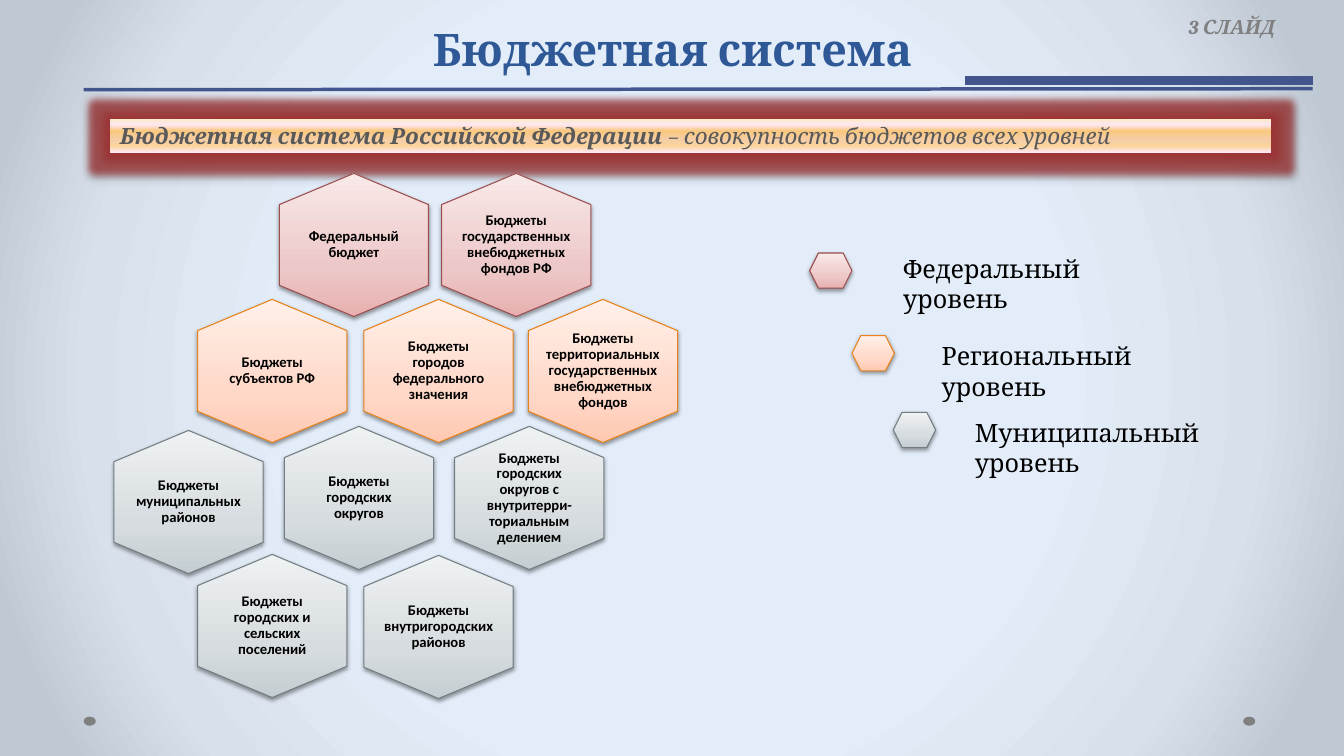
from lxml import etree
from pptx import Presentation
from pptx.dml.color import RGBColor
from pptx.enum.shapes import MSO_CONNECTOR, MSO_SHAPE
from pptx.enum.text import MSO_ANCHOR, PP_ALIGN
from pptx.oxml.ns import qn
from pptx.util import Inches, Pt

RECT, OVAL, HEXAGON = MSO_SHAPE.RECTANGLE, MSO_SHAPE.OVAL, MSO_SHAPE.HEXAGON
STRAIGHT = MSO_CONNECTOR.STRAIGHT
MIDDLE, BOTTOM = MSO_ANCHOR.MIDDLE, MSO_ANCHOR.BOTTOM
CENTER, LEFT = PP_ALIGN.CENTER, PP_ALIGN.LEFT

COLORS = {
    "title": "2F5897", "rule": "42568D", "gray": "808080",
    "banner_text": "595959", "black": "000000", "glow": "9C3030",
}
BACKGROUND = [(50, "E3EDF9"), (76, "D8E0EB"), (92, "BFC9D4")]
BANNER = [(0, "FBEAC7"), (18, "FEE7F2"), (36, "FAC77D"),
          (63, "F5CEA7"), (82, "FBD49C"), (100, "FEE7F2")]
# Budget level: gradient stops and outline colour
LEVELS = {
    "federal": ([(0, "E8B0B0"), (35, "EDC8C8"), (100, "F9E9E9")], "9A4E4E"),
    "regional": ([(0, "FFC9B1"), (35, "FFD8C8"), (100, "FFF0EA")], "E6811C"),
    "municipal": ([(0, "C5CED2"), (35, "D6DCDF"), (100, "EFF2F3")], "727D82"),
}
# Level, left, top, horizontal inset, text
BUDGETS = [
    ("federal", 2.77, 1.72, 0.22, "Федеральный бюджет"),
    ("federal", 4.38, 1.72, 0.17, "Бюджеты государственных внебюджетных фондов РФ"),
    ("regional", 1.96, 2.97, 0.22, "Бюджеты субъектов РФ"),
    ("regional", 3.61, 2.97, 0.22, "Бюджеты городов федерального значения"),
    ("regional", 5.24, 2.97, 0.17,
     "Бюджеты территориальных государственных внебюджетных фондов"),
    ("municipal", 1.13, 4.27, 0.17, "Бюджеты муниципальных районов"),
    ("municipal", 2.82, 4.23, 0.22, "Бюджеты городских округов"),
    ("municipal", 4.51, 4.23, 0.17,
     "Бюджеты городских округов с внутритерри-ториальным делением"),
    ("municipal", 1.96, 5.5, 0.22, "Бюджеты городских и сельских поселений"),
    ("municipal", 3.61, 5.51, 0.17, "Бюджеты внутригородских районов"),
]
# Level, marker left and top, text left, top and width, text
LEGEND = [
    ("federal", 8.03, 2.51, 8.86, 2.46, 2.8, "Федеральный уровень"),
    ("regional", 8.45, 3.33, 9.24, 3.33, 2.91, "Региональный уровень"),
    ("municipal", 8.86, 4.09, 9.57, 4.09, 3.24, "Муниципальный уровень"),
]
HEX_W, HEX_H, HEX_SLOPE = 1.48, 1.42, 0.31


def color(name):
    return RGBColor.from_string(COLORS[name])


def set_gradient(fill, element, stops, angle=None):
    """Linear gradient at an angle, or a circle from the centre without one."""
    fill.gradient()
    grad = element.find(".//" + qn("a:gradFill"))
    for child in list(grad):
        grad.remove(child)
    gs_list = etree.SubElement(grad, qn("a:gsLst"))
    for pos, rgb in stops:
        gs = etree.SubElement(gs_list, qn("a:gs"), pos=str(pos * 1000))
        etree.SubElement(gs, qn("a:srgbClr"), val=rgb)
    if angle is None:
        circle = etree.SubElement(grad, qn("a:path"), path="circle")
        etree.SubElement(circle, qn("a:fillToRect"),
                         dict.fromkeys("ltrb", "50000"))
    else:
        etree.SubElement(grad, qn("a:lin"), ang=str(angle * 60000), scaled="0")


def add_effect(sp, tag, rgb, alpha, **attrs):
    effects = sp.element.spPr.find(qn("a:effectLst"))
    effect = etree.SubElement(effects, qn(tag),
                              {k: str(v) for k, v in attrs.items()})
    clr = etree.SubElement(effect, qn("a:srgbClr"), val=rgb)
    etree.SubElement(clr, qn("a:alpha"), val=str(alpha * 1000))


def add_shadow(sp, alpha, blur, dist):
    add_effect(sp, "a:outerShdw", COLORS["black"], alpha, blurRad=int(Pt(blur)),
               dist=int(Pt(dist)), dir=90 * 60000, rotWithShape=0)


def format_run(r, size, font, color_name, bold=False, italic=False):
    r.font.size, r.font.name = Pt(size), font
    r.font.bold, r.font.italic = bold, italic
    r.font.color.rgb = color(color_name)


def style_level(sp, level):
    stops, outline = LEVELS[level]
    set_gradient(sp.fill, sp.element, stops, 270)
    sp.line.color.rgb = RGBColor.from_string(outline)
    sp.line.width = Pt(0.75)
    sp.shadow.inherit = False
    add_shadow(sp, 38, 3.1, 1.6)


def add_title(slide, text):
    sp = slide.shapes.title
    sp.left, sp.top = Inches(0.67), Inches(0)
    sp.width, sp.height = Inches(12), Inches(0.8)
    tf = sp.text_frame
    tf.text = text
    tf.vertical_anchor = BOTTOM
    p = tf.paragraphs[0]
    p.alignment, p.line_spacing = CENTER, Pt(58)
    format_run(p.runs[0], 32, "Cambria", "title", bold=True)


def add_label(slide, x, y, w, h, text, size, color_name, wrap=True, strong=False):
    tf = slide.shapes.add_textbox(Inches(x), Inches(y), Inches(w), Inches(h)).text_frame
    tf.word_wrap = wrap
    tf.text = text
    format_run(tf.paragraphs[0].runs[0], size, "Cambria", color_name, strong, strong)


def add_rule(slide, x1, y1, x2, y2, width):
    line = slide.shapes.add_connector(STRAIGHT, Inches(x1), Inches(y1),
                                      Inches(x2), Inches(y2))
    line.line.color.rgb = color("rule")
    line.line.width = Pt(width)
    etree.SubElement(line.element.spPr, qn("a:effectLst"))


def add_dot(slide, x, y):
    sp = slide.shapes.add_shape(OVAL, Inches(x), Inches(y), Inches(0.12), Inches(0.09))
    sp.fill.solid()
    sp.fill.fore_color.rgb = color("gray")
    sp.line.fill.background()
    sp.shadow.inherit = False


def add_banner(slide, term, definition):
    sp = slide.shapes.add_shape(RECT, Inches(1.09), Inches(1.18),
                                Inches(11.52), Inches(0.33))
    set_gradient(sp.fill, sp.element, BANNER, 90)
    sp.line.fill.background()
    sp.shadow.inherit = False
    add_effect(sp, "a:glow", COLORS["glow"], 75, rad=int(Pt(10)))
    add_shadow(sp, 32, 3.5, 2.2)
    tf = sp.text_frame
    tf.vertical_anchor = MIDDLE
    p = tf.paragraphs[0]
    p.alignment = LEFT
    for text, bold in ((term, True), (definition, False)):
        r = p.add_run()
        r.text = text
        format_run(r, 16, "Cambria", "banner_text", bold, italic=True)


def add_budget(slide, level, x, y, inset, text):
    right, bottom, mid = x + HEX_W, y + HEX_H, x + HEX_W / 2
    upper, lower = y + HEX_SLOPE, bottom - HEX_SLOPE
    corners = [(right, upper), (right, lower), (mid, bottom), (x, lower), (x, upper)]
    builder = slide.shapes.build_freeform(Inches(mid), Inches(y))
    builder.add_line_segments([(Inches(a), Inches(b)) for a, b in corners])
    sp = builder.convert_to_shape()
    style_level(sp, level)
    tf = sp.text_frame
    tf.word_wrap = True
    tf.vertical_anchor = MIDDLE
    tf.margin_left = tf.margin_right = Inches(inset)
    tf.margin_top = tf.margin_bottom = Inches(inset + 0.02)
    tf.text = text
    p = tf.paragraphs[0]
    p.alignment, p.line_spacing = CENTER, 0.9
    format_run(p.runs[0], 10.5, "Calibri", "black", bold=True)


def add_marker(slide, level, x, y):
    sp = slide.shapes.add_shape(HEXAGON, Inches(x), Inches(y), Inches(0.42), Inches(0.35))
    style_level(sp, level)


def main():
    prs = Presentation()
    prs.slide_width, prs.slide_height = Inches(13.33), Inches(7.5)
    slide = prs.slides.add_slide(prs.slide_layouts[5])
    set_gradient(slide.background.fill, slide.element, BACKGROUND)

    # Header and footer dots
    for x in (0.83, 12.33):
        add_dot(slide, x, 7.11)
    add_title(slide, "Бюджетная система")
    add_banner(slide, "Бюджетная система Российской Федерации ",
               "– совокупность бюджетов всех уровней")
    add_label(slide, 11.69, 0.1, 1.06, 0.34, "3 СЛАЙД", 14, "gray",
              wrap=False, strong=True)
    add_rule(slide, 0.83, 0.89, 13.02, 0.88, 2.5)
    add_rule(slide, 9.57, 0.8, 13.02, 0.8, 6)

    # Honeycomb of budgets
    for budget in BUDGETS:
        add_budget(slide, *budget)

    # Legend
    for level, x, y, text_x, text_y, width, text in LEGEND:
        add_marker(slide, level, x, y)
        add_label(slide, text_x, text_y, width, 0.4, text, 18, "black")

    prs.save("out.pptx")


if __name__ == "__main__":
    main()
